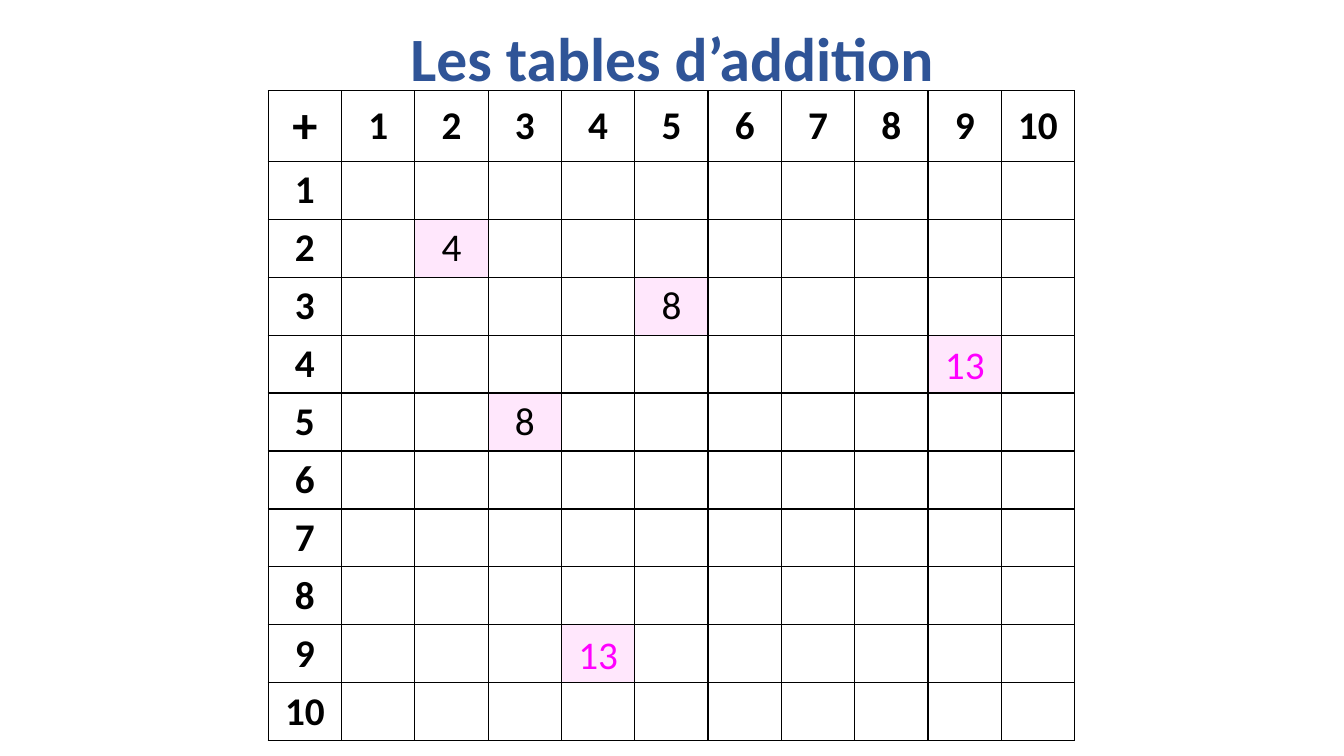
from lxml import etree
from pptx import Presentation
from pptx.dml.color import RGBColor
from pptx.enum.text import MSO_ANCHOR, PP_ALIGN
from pptx.oxml.ns import qn
from pptx.util import Inches, Pt

CENTER = PP_ALIGN.CENTER
MIDDLE = MSO_ANCHOR.MIDDLE
BLACK = RGBColor(0x00, 0x00, 0x00)
WHITE = RGBColor(0xFF, 0xFF, 0xFF)
BLUE = RGBColor(0x2F, 0x54, 0x97)
PINK = RGBColor(0xFF, 0xE7, 0xFC)
MAGENTA = RGBColor(0xFF, 0x00, 0xFF)

# Grid of the addition table, in inches
COUNT = 11
LEFT, TOP, WIDTH = 2.66, 0.9, 8
COLUMN = WIDTH / COUNT
HEADER, ROW = 0.7, 0.575

# Sums by (row, column)
SUMS = {(2, 2): "4", (3, 5): "8", (5, 3): "8"}
ANSWERS = {(9, 4): "13", (4, 9): "13"}


def write(frame, text, size, color, bold=False):
    frame.word_wrap = True
    paragraph = frame.paragraphs[0]
    paragraph.text = text
    paragraph.alignment = CENTER
    font = paragraph.font
    font.name, font.size, font.bold = "Calibri", Pt(size), bold
    font.color.rgb = color
    return paragraph


def add_borders(cell):
    properties = cell._tc.get_or_add_tcPr()
    for position, side in enumerate(("a:lnL", "a:lnR", "a:lnT", "a:lnB")):
        line = etree.Element(qn(side), w=str(Pt(1)))
        fill = etree.SubElement(line, qn("a:solidFill"))
        etree.SubElement(fill, qn("a:srgbClr"), val=str(BLACK))
        properties.insert(position, line)


prs = Presentation()
prs.slide_width, prs.slide_height = Inches(13.33), Inches(7.5)
slide = prs.slides.add_slide(prs.slide_layouts[6])

# Title
title = slide.shapes.add_textbox(Inches(0.92), Inches(-0.11), Inches(11.5), Inches(1.45)).text_frame
title.vertical_anchor = MIDDLE
write(title, "Les tables d’addition", 44, BLUE, True).line_spacing = 0.9

# Addition table
additions = slide.shapes.add_table(
    COUNT, COUNT, Inches(LEFT), Inches(TOP), Inches(WIDTH), Inches(HEADER + ROW * (COUNT - 1))
).table
for column in additions.columns:
    column.width = Inches(COLUMN)
for r, row in enumerate(additions.rows):
    row.height = Inches(ROW if r else HEADER)
    for c, cell in enumerate(row.cells):
        is_header = r == 0 or c == 0
        is_marked = (r, c) in SUMS or (r, c) in ANSWERS
        text = (str(r + c) if r + c else "+") if is_header else SUMS.get((r, c), "")
        cell.fill.solid()
        cell.fill.fore_color.rgb = PINK if is_marked else WHITE
        cell.vertical_anchor = MIDDLE
        add_borders(cell)
        if text:
            write(cell.text_frame, text, 36 if text == "+" else 28, BLACK, is_header)

# Answers laid over their cells
for (r, c), answer in ANSWERS.items():
    box = slide.shapes.add_textbox(
        Inches(LEFT + c * COLUMN), Inches(TOP + HEADER + (r - 1) * ROW), Inches(COLUMN), Inches(ROW)
    )
    write(box.text_frame, answer, 28, MAGENTA)

prs.save("out.pptx")
